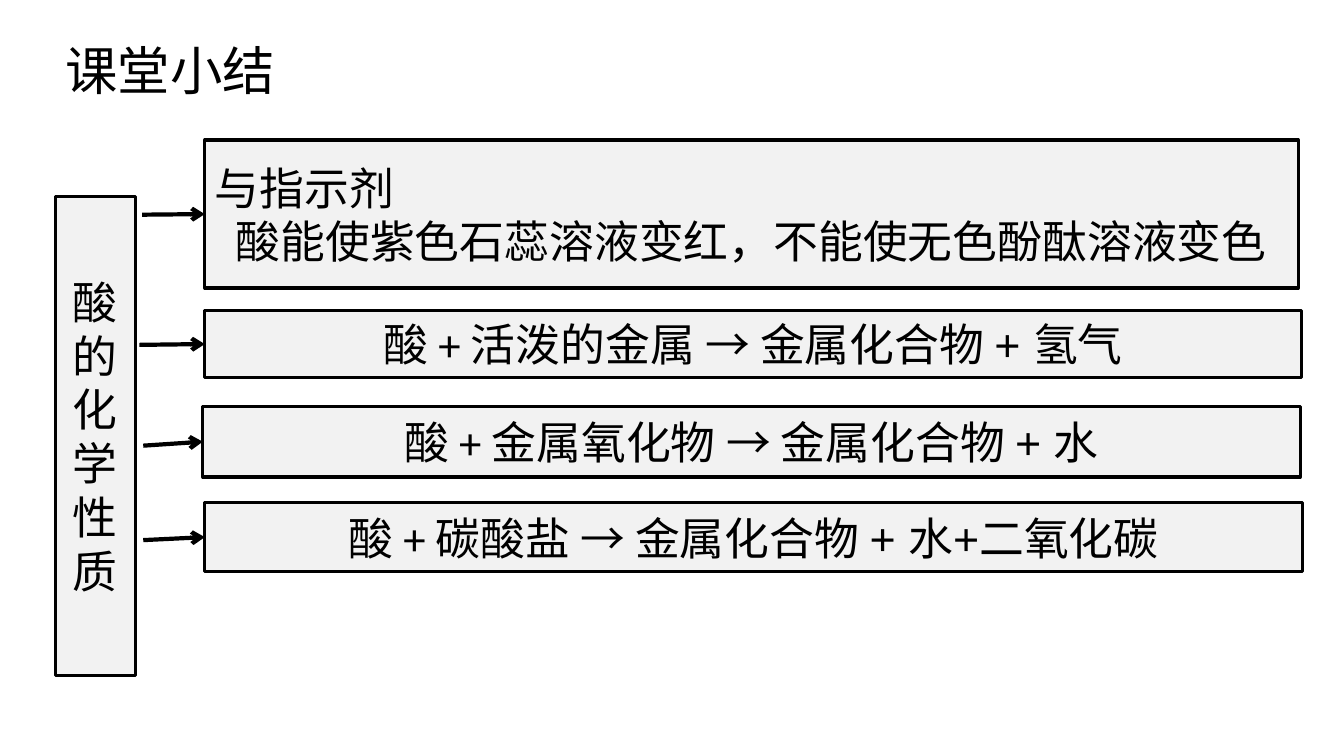
from lxml.etree import SubElement
from pptx import Presentation
from pptx.dml.color import RGBColor
from pptx.enum.shapes import MSO_CONNECTOR as Connector, MSO_SHAPE as Shape
from pptx.enum.text import MSO_ANCHOR as Anchor, MSO_AUTO_SIZE as AutoSize, PP_ALIGN as Align
from pptx.oxml.ns import qn
from pptx.util import Cm, Pt

BLACK = RGBColor(0x00, 0x00, 0x00)
LIGHT_GREY = RGBColor(0xF2, 0xF2, 0xF2)
LEFT_SIDE = 1

INDICATOR_TEXT = [
    (Align.LEFT, [("与指示剂", "Calibri")]),
    (Align.CENTER, [("酸能使紫色石蕊溶液变红，不能使无色酚酞溶液变色", "Calibri")]),
]


def reaction(reactants, products):
    """Return one centred paragraph, with the arrow and products in Arial."""
    return [(Align.CENTER, [(reactants + " ", "Calibri"), ("→ " + products, "Arial")])]


# Box position and size, start of its arrow (all in cm), paragraphs
PROPERTIES = [
    ((5.16, 3.53, 27.56, 3.73), (3.58, 5.41), INDICATOR_TEXT),
    ((5.16, 7.82, 27.64, 1.7), (3.51, 8.69),
     reaction("酸 + 活泼的金属", "金属化合物 + 氢气")),
    ((5.11, 10.24, 27.66, 1.78), (3.61, 11.23),
     reaction("酸 + 金属氧化物", "金属化合物 + 水")),
    ((5.16, 12.67, 27.66, 1.73), (3.61, 13.61),
     reaction("酸 + 碳酸盐", "金属化合物 + 水+二氧化碳")),
]


def add_run(paragraph, text, font_name, size):
    run = paragraph.add_run()
    run.text = text
    run.font.name = font_name
    run.font.size = Pt(size)
    run.font.color.rgb = BLACK


def set_title(slide, text):
    title = slide.shapes.title
    title.left, title.top, title.width, title.height = map(Cm, (1.4, 0.84, 12.8, 1.85))
    frame = title.text_frame
    frame.auto_size = AutoSize.NONE
    frame.vertical_anchor = Anchor.MIDDLE
    paragraph = frame.paragraphs[0]
    paragraph.alignment = Align.LEFT
    add_run(paragraph, text, "Calibri", 37.4)


def add_box(slide, bounds, paragraphs):
    box = slide.shapes.add_shape(Shape.RECTANGLE, *map(Cm, bounds))
    box.shadow.inherit = False
    box.fill.solid()
    box.fill.fore_color.rgb = LIGHT_GREY
    box.line.color.rgb = BLACK
    box.line.width = Pt(2.25)
    frame = box.text_frame
    frame.word_wrap = True
    frame.vertical_anchor = Anchor.MIDDLE
    for index, (alignment, runs) in enumerate(paragraphs):
        paragraph = frame.add_paragraph() if index else frame.paragraphs[0]
        paragraph.alignment = alignment
        for text, font_name in runs:
            add_run(paragraph, text, font_name, 32)
    return box


def add_arrow(slide, start, box):
    """Draw an arrow from start to the middle of the box's left side."""
    x, y = map(Cm, start)
    arrow = slide.shapes.add_connector(Connector.STRAIGHT, x, y, box.left, y)
    arrow.end_connect(box, LEFT_SIDE)
    arrow.line.color.rgb = BLACK
    arrow.line.width = Pt(3)
    SubElement(arrow.line._get_or_add_ln(), qn("a:tailEnd"), type="arrow")
    SubElement(arrow._element.spPr, qn("a:effectLst"))


def main():
    presentation = Presentation()
    presentation.slide_width = Cm(33.87)
    presentation.slide_height = Cm(19.05)
    title_only = presentation.slide_layouts[5]
    slide = presentation.slides.add_slide(title_only)

    set_title(slide, "课堂小结")
    add_box(slide, (1.4, 4.95, 2.01, 12.07),
            [(Align.CENTER, [("酸的化学性质", "Calibri")])])
    for bounds, arrow_start, paragraphs in PROPERTIES:
        box = add_box(slide, bounds, paragraphs)
        add_arrow(slide, arrow_start, box)

    presentation.save("out.pptx")


if __name__ == "__main__":
    main()
